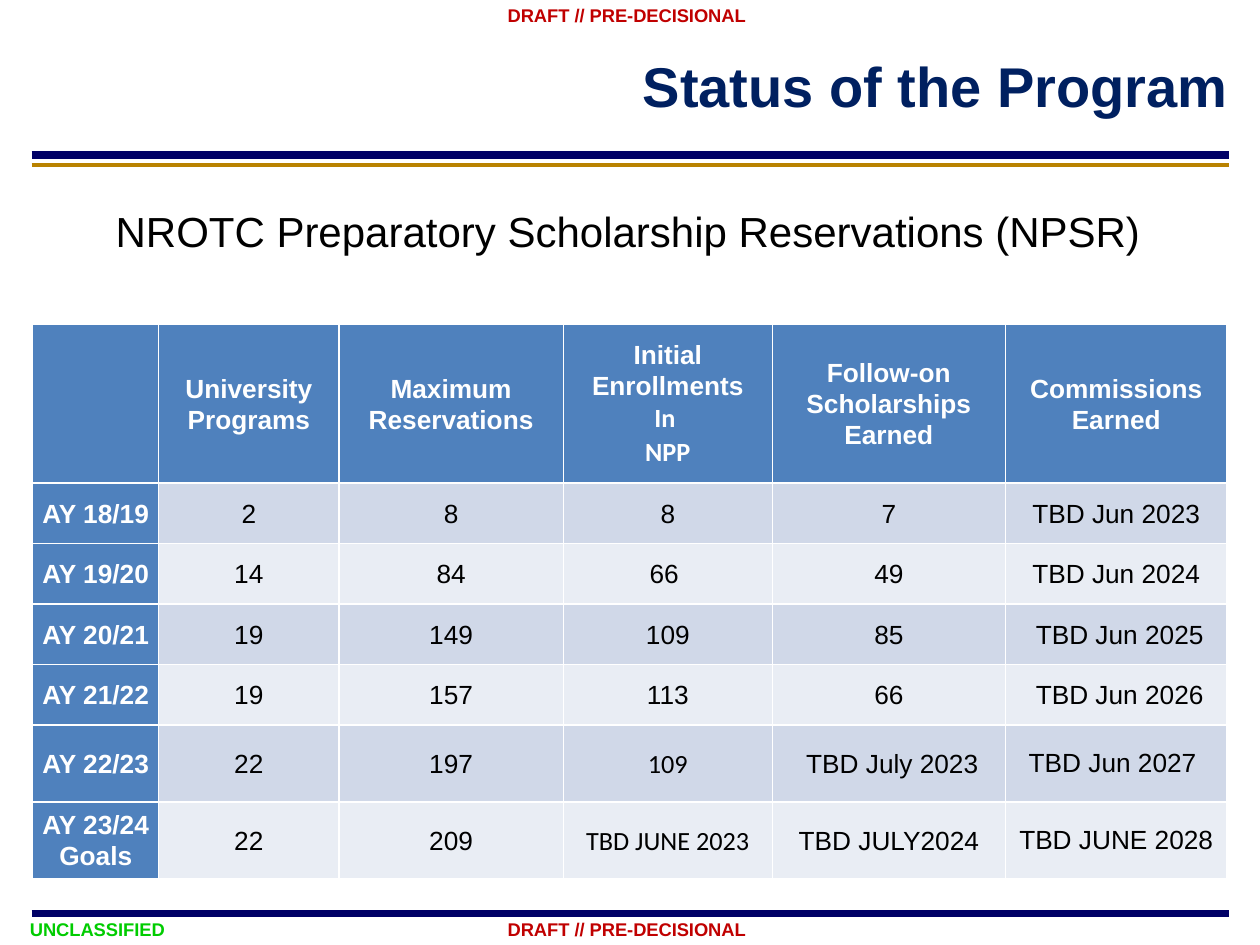
from pptx import Presentation
from pptx.util import Pt
from pptx.dml.color import RGBColor
from pptx.enum.shapes import MSO_CONNECTOR
from pptx.enum.text import MSO_ANCHOR, PP_ALIGN
from lxml.etree import SubElement
from pptx.oxml.ns import qn


def rgb(value):
    return RGBColor.from_string(value)


def write(tf, text, size=15, color="000000", bold=False, font="Arial",
          align=None, spacing=None, anchor=MSO_ANCHOR.MIDDLE, wrap=True,
          margins=(7.2, 3.6, 7.2, 3.6)):
    tf.word_wrap = wrap
    tf.vertical_anchor = anchor
    tf.margin_left, tf.margin_top, tf.margin_right, tf.margin_bottom = map(Pt, margins)
    fonts = font if isinstance(font, list) else [font] * len(text.split("\n"))
    for i, (line, name) in enumerate(zip(text.split("\n"), fonts)):
        p = tf.paragraphs[0] if i == 0 else tf.add_paragraph()
        p.alignment = align
        p.line_spacing = spacing
        r = p.add_run()
        r.text = line
        r.font.size = Pt(size)
        r.font.bold = bold
        r.font.name = name
        r.font.color.rgb = rgb(color)


prs = Presentation()
prs.slide_width, prs.slide_height = Pt(720), Pt(540)
s = prs.slides.add_slide(prs.slide_layouts[5])

markings = [
    ("DRAFT // PRE-DECISIONAL", 283, 0.7, 152.6, 16.6, "C00000", 2.2),
    ("DRAFT // PRE-DECISIONAL", 283, 522.7, 152.6, 16.6, "C00000", 2.2),
    ("UNCLASSIFIED", 10, 521.3, 93, 19.4, "00CC00", 3.6),
]
for text, x, y, w, h, color, inset in markings:
    sp = s.shapes.add_textbox(Pt(x), Pt(y), Pt(w), Pt(h))
    write(sp.text_frame, text, size=10.5, color=color, bold=True, spacing=Pt(12),
          wrap=False, margins=(7.2, inset, 7.2, inset))

for y, color, width in [(88.5, "000066", 4.5), (94.3, "B98200", 2.75), (522, "000066", 4.5)]:
    rule = s.shapes.add_connector(MSO_CONNECTOR.STRAIGHT, Pt(18), Pt(y), Pt(702), Pt(y))
    rule.line.color.rgb = rgb(color)
    rule.line.width = Pt(width)
    SubElement(rule._element.spPr, qn("a:effectLst"))

title = s.shapes.title
title.left, title.top, title.width, title.height = Pt(36), Pt(18), Pt(666), Pt(61.2)
write(title.text_frame, "Status of the Program", size=32, color="002060", bold=True,
      align=PP_ALIGN.RIGHT, margins=(7.2, 3.6, 0, 3.6))

rows = [
    ["", "University Programs", "Maximum Reservations", "Initial Enrollments\nIn \nNPP",
     "Follow-on Scholarships Earned", "Commissions Earned"],
    ["AY 18/19", "2", "8", "8", "7", "TBD Jun 2023"],
    ["AY 19/20", "14", "84", "66 ", "49", "TBD Jun 2024"],
    ["AY 20/21", "19", "149", "109", "85", " TBD Jun 2025"],
    ["AY 21/22 ", "19", "157", "113", "66", " TBD Jun 2026"],
    ["AY 22/23 ", "22", "197", "109", " TBD July 2023", "TBD Jun 2027 "],
    ["AY 23/24\nGoals", "22", "209", "TBD JUNE 2023", "TBD JULY2024", "TBD JUNE 2028"],
]
fonts = {(0, 3): ["Arial", "Calibri", "Calibri"], (5, 3): "Calibri", (6, 3): "Calibri"}
widths = [72, 103, 128.2, 119.5, 133.2, 126.7]
heights = [90.7] + [34.6] * 4 + [43.9] * 2

table = s.shapes.add_table(len(rows), len(widths), Pt(18.7), Pt(185.3),
                           Pt(sum(widths)), Pt(sum(heights))).table
table.first_col = True
for column, width in zip(table.columns, widths):
    column.width = Pt(width)
for row, height in zip(table.rows, heights):
    row.height = Pt(height)

for i, row in enumerate(rows):
    for j, text in enumerate(row):
        cell = table.cell(i, j)
        heading = i == 0 or j == 0
        cell.fill.solid()
        cell.fill.fore_color.rgb = rgb("4F81BD" if heading else "D0D8E8" if i % 2 else "E9EDF4")
        cell.vertical_anchor = MSO_ANCHOR.MIDDLE
        cell.margin_left = cell.margin_right = Pt(4.3)
        cell.margin_top = cell.margin_bottom = 0
        if text:
            write(cell.text_frame, text, color="FFFFFF" if heading else "000000",
                  bold=heading, font=fonts.get((i, j), "Arial"), align=PP_ALIGN.CENTER,
                  spacing=None if j == 5 and i > 4 else 1.06)

sp = s.shapes.add_textbox(Pt(59), Pt(113.8), Pt(602), Pt(36))
write(sp.text_frame, "NROTC Preparatory Scholarship Reservations (NPSR)", size=24,
      anchor=MSO_ANCHOR.TOP)

prs.save("out.pptx")
